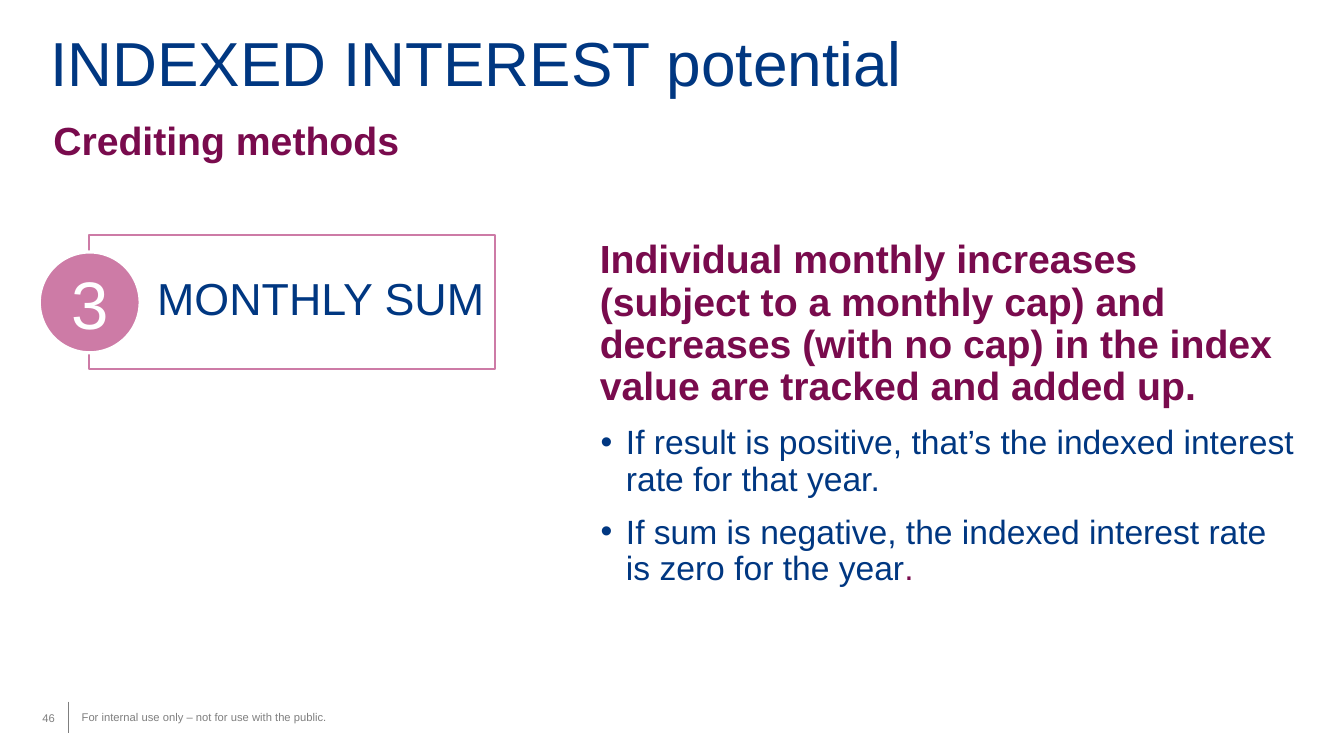
from dataclasses import dataclass
from typing import NamedTuple

from lxml import etree
from pptx import Presentation
from pptx import util as u
from pptx.dml.color import RGBColor
from pptx.enum import shapes, text
from pptx.oxml.ns import qn


@dataclass(frozen=True)
class Theme:
    font: str = "Arial"
    navy: str = "003781"
    plum: str = "790B4D"
    pink: str = "CD7BA6"
    grey: str = "7F7F7F"
    white: str = "FFFFFF"
    title: float = 44.4
    numeral: float = 48
    label: float = 32
    heading: float = 28
    body: float = 24
    footer: float = 8


THEME = Theme()


class Area(NamedTuple):
    left: float
    top: float
    width: float
    height: float

    def lengths(self) -> list[u.Length]:
        return [u.Inches(value) for value in self]


class Span(NamedTuple):
    text: str
    color: str


@dataclass(frozen=True)
class Para:
    spans: tuple[Span, ...]
    size: float
    bold: bool = False
    spacing: float = 1.0
    before: float = 0
    bullet: bool = False


class Insets(NamedTuple):
    left: float = 0.1
    top: float = 0.05
    right: float = 0.1
    bottom: float = 0.05


def add_bullet(para, color: str) -> None:
    properties = para._p.get_or_add_pPr()
    properties.set("marL", str(u.Inches(0.26)))
    properties.set("indent", str(u.Inches(-0.25)))
    bullet_color = etree.SubElement(properties, qn("a:buClr"))
    etree.SubElement(bullet_color, qn("a:srgbClr"), val=color)
    etree.SubElement(properties, qn("a:buFont"), typeface=THEME.font)
    etree.SubElement(properties, qn("a:buChar"), char="•")


def write(box, *paras: Para, insets: Insets = Insets(),
          anchor=text.MSO_ANCHOR.TOP, align=text.PP_ALIGN.LEFT) -> None:
    frame = box.text_frame
    frame.word_wrap = True
    frame.vertical_anchor = anchor
    frame.margin_left, frame.margin_top, frame.margin_right, frame.margin_bottom = (
        u.Inches(value) for value in insets)
    for index, item in enumerate(paras):
        para = frame.add_paragraph() if index else frame.paragraphs[0]
        para.alignment = align
        para.line_spacing = item.spacing
        if item.before:
            para.space_before = u.Pt(item.before)
        if item.bullet:
            add_bullet(para, item.spans[0].color)
        for span in item.spans:
            for row, words in enumerate(span.text.split("\n")):
                if row:
                    para.add_line_break()
                run = para.add_run()
                run.text = words
                run.font.name = THEME.font
                run.font.size = u.Pt(item.size)
                run.font.bold = item.bold
                run.font.color.rgb = RGBColor.from_string(span.color)


def add_text(page, area: Area, *paras: Para, **layout) -> None:
    write(page.shapes.add_textbox(*area.lengths()), *paras, **layout)


def add_outlined(page, kind, area: Area, line: str, width: float, fill: str | None = None):
    shape = page.shapes.add_shape(kind, *area.lengths())
    shape.shadow.inherit = False
    if fill:
        shape.fill.solid()
        shape.fill.fore_color.rgb = RGBColor.from_string(fill)
    else:
        shape.fill.background()
    shape.line.color.rgb = RGBColor.from_string(line)
    shape.line.width = u.Pt(width)
    return shape


def add_footer(page) -> None:
    def small(words: str) -> Para:
        return Para((Span(words, THEME.grey),), THEME.footer)

    add_text(page, Area(0.81, 6.99, 11.91, 0.26),
             small("For internal use only – not for use with the public."),
             insets=Insets(0, 0.06, 0.12, 0.06))
    add_text(page, Area(0.42, 6.92, 0.4, 0.4), small("46"),
             insets=Insets(0, 0.06, 0, 0.06), anchor=text.MSO_ANCHOR.MIDDLE)
    divider = page.shapes.add_connector(
        shapes.MSO_CONNECTOR.STRAIGHT,
        u.Inches(0.68), u.Inches(6.96), u.Inches(0.68), u.Inches(7.27))
    divider.line.color.rgb = RGBColor.from_string(THEME.grey)
    divider.line.width = u.Pt(0.75)
    etree.SubElement(divider._element.spPr, qn("a:effectLst"))


def add_method_badge(page) -> None:
    add_outlined(page, shapes.MSO_SHAPE.RECTANGLE, Area(0.88, 2.33, 4.03, 1.33),
                 THEME.pink, 1.5)
    circle = add_outlined(page, shapes.MSO_SHAPE.OVAL, Area(0.39, 2.5, 1, 1),
                          THEME.white, 2.25, THEME.pink)
    write(circle, Para((Span("3", THEME.white),), THEME.numeral),
          anchor=text.MSO_ANCHOR.MIDDLE, align=text.PP_ALIGN.CENTER)
    add_text(page, Area(1.46, 2.7, 3.45, 0.59),
             Para((Span("MONTHLY SUM", THEME.navy),), THEME.label, spacing=0.9))


def add_explanation(page) -> None:
    lead = Span("Individual monthly increases\n(subject to a monthly cap) and decreases "
                "(with no cap) in the index value are tracked and added up.", THEME.plum)
    outcomes = (
        (Span("If result is positive, that’s the indexed interest rate for that year.",
              THEME.navy),),
        (Span("If sum is negative, the indexed interest rate is zero for the year",
              THEME.navy), Span(".", THEME.plum)),
    )
    add_text(page, Area(5.85, 2.33, 7.12, 3.44),
             Para((lead,), THEME.heading, bold=True, spacing=0.9),
             *(Para(spans, THEME.body, spacing=0.9, before=12, bullet=True)
               for spans in outcomes))


def main() -> None:
    deck = Presentation()
    deck.slide_width, deck.slide_height = u.Inches(13.33), u.Inches(7.5)
    page = deck.slides.add_slide(deck.slide_layouts[6])
    add_footer(page)
    add_method_badge(page)
    add_explanation(page)
    add_text(page, Area(0.4, 0.28, 8.91, 0.82),
             Para((Span("INDEXED INTEREST potential", THEME.navy),), THEME.title, spacing=0.9))
    add_text(page, Area(0.43, 1.1, 3.68, 0.57),
             Para((Span("Crediting methods", THEME.plum),), THEME.heading, bold=True))
    deck.save("out.pptx")


if __name__ == "__main__":
    main()
